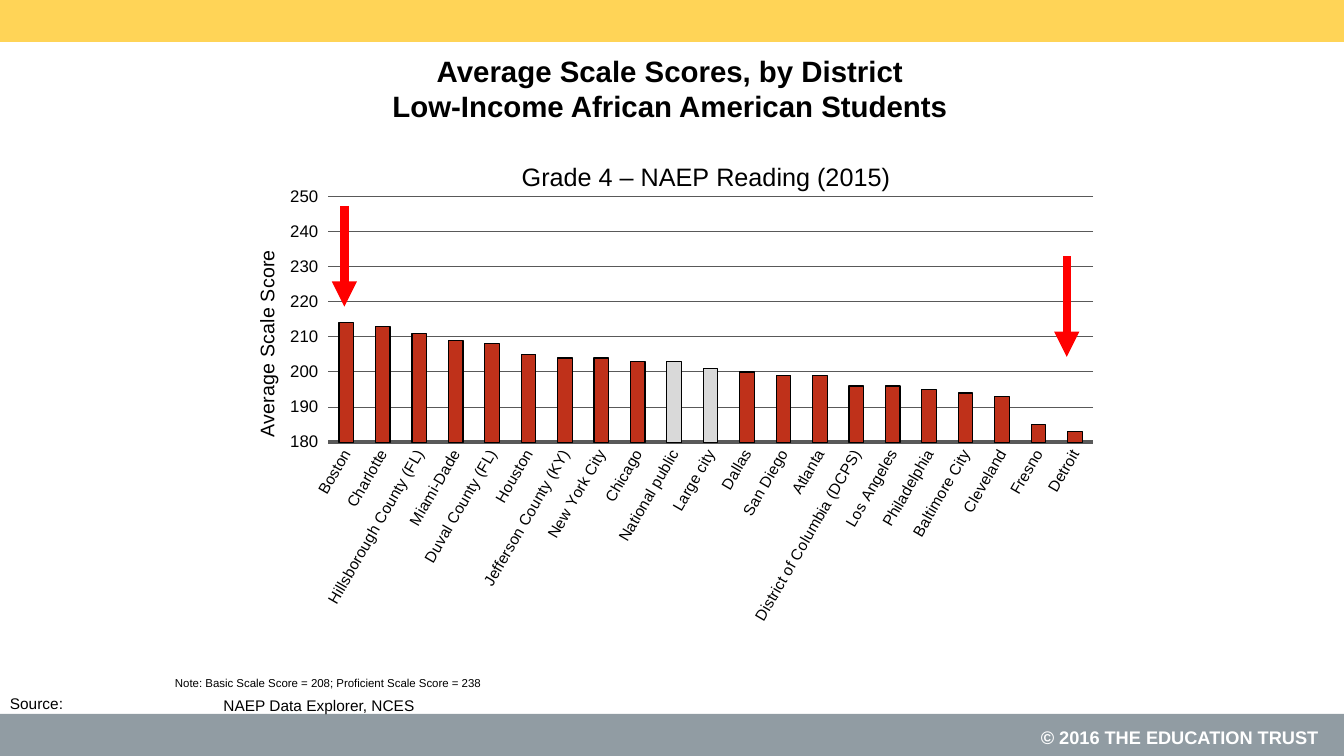
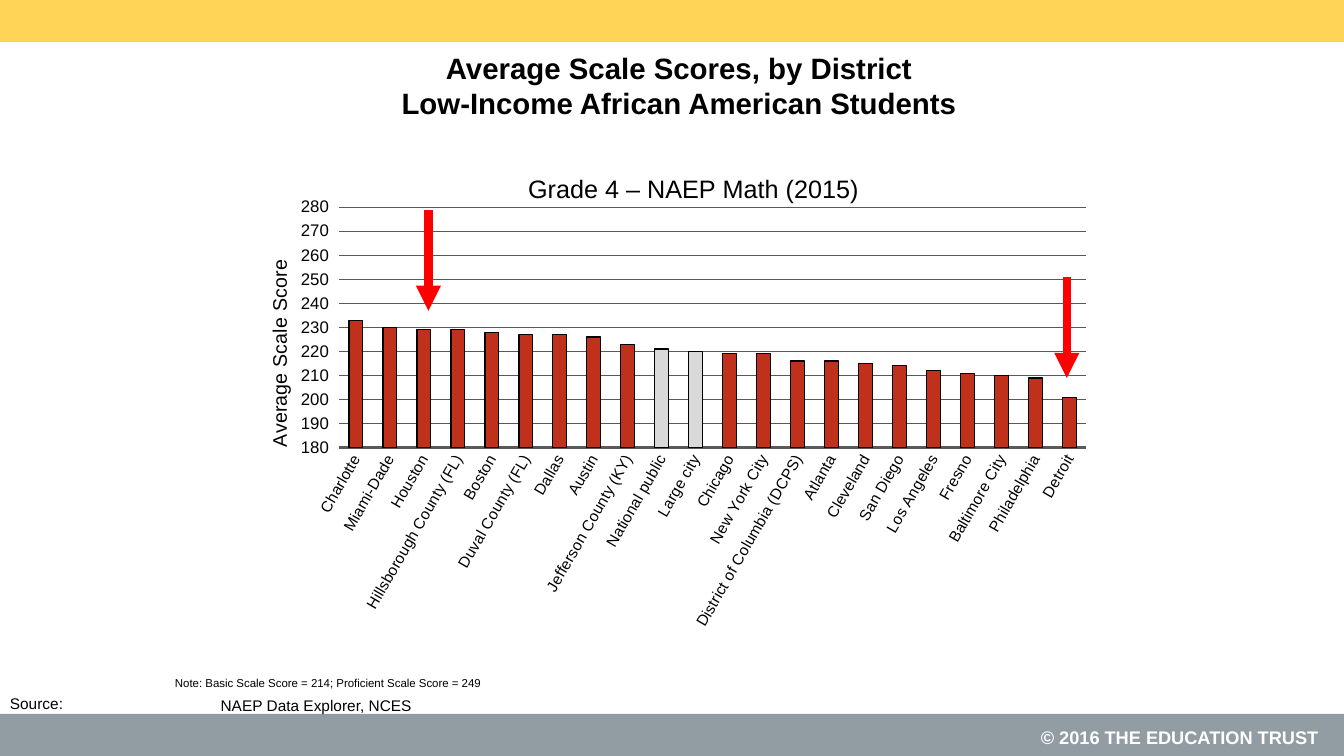
from lxml.etree import SubElement
from pptx import Presentation
from pptx.chart.data import CategoryChartData
from pptx.dml.color import RGBColor
from pptx.enum.chart import XL_CHART_TYPE as ChartType, XL_TICK_MARK as TickMark
from pptx.enum.shapes import MSO_CONNECTOR as Connector, MSO_SHAPE as Shape
from pptx.enum.text import MSO_ANCHOR as Anchor, MSO_AUTO_SIZE as AutoSize, PP_ALIGN as Align
from pptx.oxml.ns import qn
from pptx.util import Pt

FONT = "Arial"
BLACK, WHITE, GOLD, SLATE = "000000", "FFFFFF", "FFD457", "919CA3"
BRICK, PALE, GRID, RED = "BF311A", "D9D9D9", "595959", "FF0000"
WIDTH, HEIGHT, BAND = 960, 540, 30
ARROW_LENGTH = 72

HEADING = "Average Scale Scores, by District\vLow-Income African American Students"
SOURCE = "NAEP Data Explorer, NCES"
COPYRIGHT = "© 2016 THE EDUCATION TRUST"
BENCHMARKS = ("National public", "Large city")

SLIDES = [
    dict(
        subject="Grade 4 – NAEP Reading (2015)",
        note="Note: Basic Scale Score = 208; Proficient Scale Score = 238",
        title_at=(235.5, 31.5), chart_at=(173, 108, 614, 358.5), source_left=152.5,
        top_score=250, arrows=[(246, 147), (762, 183)],
        scores=[
            ("Boston", 214), ("Charlotte", 213), ("Hillsborough County (FL)", 211),
            ("Miami-Dade", 209), ("Duval County (FL)", 208), ("Houston", 205),
            ("Jefferson County (KY)", 204), ("New York City", 204), ("Chicago", 203),
            ("National public", 203), ("Large city", 201), ("Dallas", 200),
            ("San Diego", 199), ("Atlanta", 199), ("District of Columbia (DCPS)", 196),
            ("Los Angeles", 196), ("Philadelphia", 195), ("Baltimore City", 194),
            ("Cleveland", 193), ("Fresno", 185), ("Detroit", 183),
        ],
    ),
    dict(
        subject="Grade 4 – NAEP Math (2015)",
        note="Note: Basic Scale Score = 214; Proficient Scale Score = 249",
        title_at=(242, 29.5), chart_at=(182, 116.5, 600, 350.5), source_left=150.5,
        top_score=280, arrows=[(306, 150), (762, 198)],
        scores=[
            ("Charlotte", 233), ("Miami-Dade", 230), ("Houston", 229),
            ("Hillsborough County (FL)", 229), ("Boston", 228), ("Duval County (FL)", 227),
            ("Dallas", 227), ("Austin", 226), ("Jefferson County (KY)", 223),
            ("National public", 221), ("Large city", 220), ("Chicago", 219),
            ("New York City", 219), ("District of Columbia (DCPS)", 216), ("Atlanta", 216),
            ("Cleveland", 215), ("San Diego", 214), ("Los Angeles", 212), ("Fresno", 211),
            ("Baltimore City", 210), ("Philadelphia", 209), ("Detroit", 201),
        ],
    ),
]


def rgb(color):
    return RGBColor.from_string(color)


def points(values):
    return [Pt(value) for value in values]


def style_font(font, size, color=BLACK, bold=False):
    font.name, font.size, font.bold = FONT, Pt(size), bold
    font.color.rgb = rgb(color)


def style_line(line, color, width):
    line.color.rgb = rgb(color)
    line.width = Pt(width)


def style_fill(fill, color):
    fill.solid()
    fill.fore_color.rgb = rgb(color)


def add_band(page, top, color):
    band = page.shapes.add_shape(Shape.RECTANGLE, *points((0, top, WIDTH, BAND)))
    band.shadow.inherit = False
    style_fill(band.fill, color)
    band.line.fill.background()
    return band


def add_text(page, frame, text, size, color=BLACK, bold=False):
    box = page.shapes.add_textbox(*points(frame))
    box.text_frame.word_wrap = True
    para = box.text_frame.paragraphs[0]
    para.text = text
    style_font(para.font, size, color, bold)
    return box


def add_shared_parts(page):
    """Draw the bands and standing texts, then move them to the page's layout."""
    footer = add_text(page, (652.5, 515, 296, 23), COPYRIGHT, 13, WHITE, True)
    para = footer.text_frame.paragraphs[0]
    para.alignment, para.line_spacing = Align.RIGHT, Pt(16)
    parts = [
        add_band(page, HEIGHT - BAND, SLATE), footer, add_band(page, 0, GOLD),
        add_text(page, (0, 492, 64, 21), "Source:", 11),
    ]
    for number, part in enumerate(parts, 20):
        part.element.nvSpPr.cNvPr.set("id", str(number))
        page.slide_layout.shapes.element.append(part.element)


def set_title(page, left, top):
    title = page.shapes.title
    title.left, title.top, title.width, title.height = points((left, top, 486, 63))
    frame = title.text_frame
    frame.text = HEADING
    frame.auto_size, frame.vertical_anchor = AutoSize.NONE, Anchor.MIDDLE
    para = frame.paragraphs[0]
    para.alignment = Align.CENTER
    style_font(para.font, 21, bold=True)


def place_in_chart(element, index, **sizes):
    """Give a chart part a fixed place, in fractions of the chart."""
    for old in element.findall(qn("c:layout")):
        element.remove(old)
    layout = element.makeelement(qn("c:layout"))
    element.insert(index, layout)
    manual = SubElement(layout, qn("c:manualLayout"))
    if "w" in sizes:
        SubElement(manual, qn("c:layoutTarget")).set("val", "inner")
    for name in ("x", "y"):
        SubElement(manual, qn(f"c:{name}Mode")).set("val", "edge")
    for name, value in sizes.items():
        SubElement(manual, qn(f"c:{name}")).set("val", str(value))


def set_chart_text(title, text, size, x, y):
    title.text_frame.text = text
    style_font(title.text_frame.paragraphs[0].font, size)
    place_in_chart(title.element, 1, x=x, y=y)


def rotate(body, degrees):
    body.set("rot", str(degrees * 60000))
    body.set("vert", "horz")


def add_score_chart(page, frame, subject, scores, top_score):
    data = CategoryChartData(number_format="0")
    data.categories = [district for district, _ in scores]
    data.add_series("Series 1", [score for _, score in scores])
    chart = page.shapes.add_chart(ChartType.COLUMN_CLUSTERED, *points(frame), data).chart
    chart.has_legend = False
    style_font(chart.font, 15.3)
    set_chart_text(chart.chart_title, subject, 18, 0.32, 0.01)
    place_in_chart(chart.element.xpath(".//c:plotArea")[0], 0, x=0.1, y=0.09, w=0.89, h=0.49)

    districts = chart.category_axis
    districts.major_tick_mark = TickMark.NONE
    style_line(districts.format.line, GRID, 2.5)
    style_font(districts.tick_labels.font, 11)
    rotate(chart.element.xpath(".//c:catAx/c:txPr/a:bodyPr")[0], -60)

    axis = chart.value_axis
    axis.minimum_scale, axis.maximum_scale, axis.major_unit = 180, top_score, 10
    axis.major_tick_mark = TickMark.OUTSIDE
    axis.format.line.fill.background()
    style_line(axis.major_gridlines.format.line, GRID, 0.75)
    style_font(axis.tick_labels.font, 12)
    axis.tick_labels.number_format = "0"
    axis.tick_labels.number_format_is_linked = False
    set_chart_text(axis.axis_title, "Average Scale Score", 14, 0.01, 0.19)
    rotate(axis.axis_title.element.xpath(".//a:bodyPr")[0], -90)

    plot = chart.plots[0]
    plot.gap_width, plot.vary_by_categories = 150, False
    bars = plot.series[0]
    marked = [bars.points[i] for i, (name, _) in enumerate(scores) if name in BENCHMARKS]
    for part, color in [(bars, BRICK)] + [(bar, PALE) for bar in marked]:
        style_fill(part.format.fill, color)
        style_line(part.format.line, BLACK, 0.85)


def add_arrow(page, x, top):
    ends = points((x, top, x, top + ARROW_LENGTH))
    arrow = page.shapes.add_connector(Connector.STRAIGHT, *ends)
    style_line(arrow.line, RED, 6)
    SubElement(arrow.line._get_or_add_ln(), qn("a:tailEnd")).set("type", "triangle")
    SubElement(arrow.element.spPr, qn("a:effectLst"))


def add_note(page, text):
    frame = add_text(page, (120, 480, 292, 14), text, 8.2).text_frame
    frame.margin_left = frame.margin_right = Pt(5)
    frame.margin_top = frame.margin_bottom = Pt(3)


def main():
    deck = Presentation()
    deck.slide_width, deck.slide_height = Pt(WIDTH), Pt(HEIGHT)
    layout = deck.slide_layouts.get_by_name("Title Only")
    for index, content in enumerate(SLIDES):
        page = deck.slides.add_slide(layout)
        if index == 0:
            add_shared_parts(page)
        set_title(page, *content["title_at"])
        add_score_chart(page, content["chart_at"], content["subject"],
                        content["scores"], content["top_score"])
        add_text(page, (content["source_left"], 494, 292, 14), SOURCE, 11)
        add_note(page, content["note"])
        for x, top in content["arrows"]:
            add_arrow(page, x, top)
    deck.save("out.pptx")


if __name__ == "__main__":
    main()
